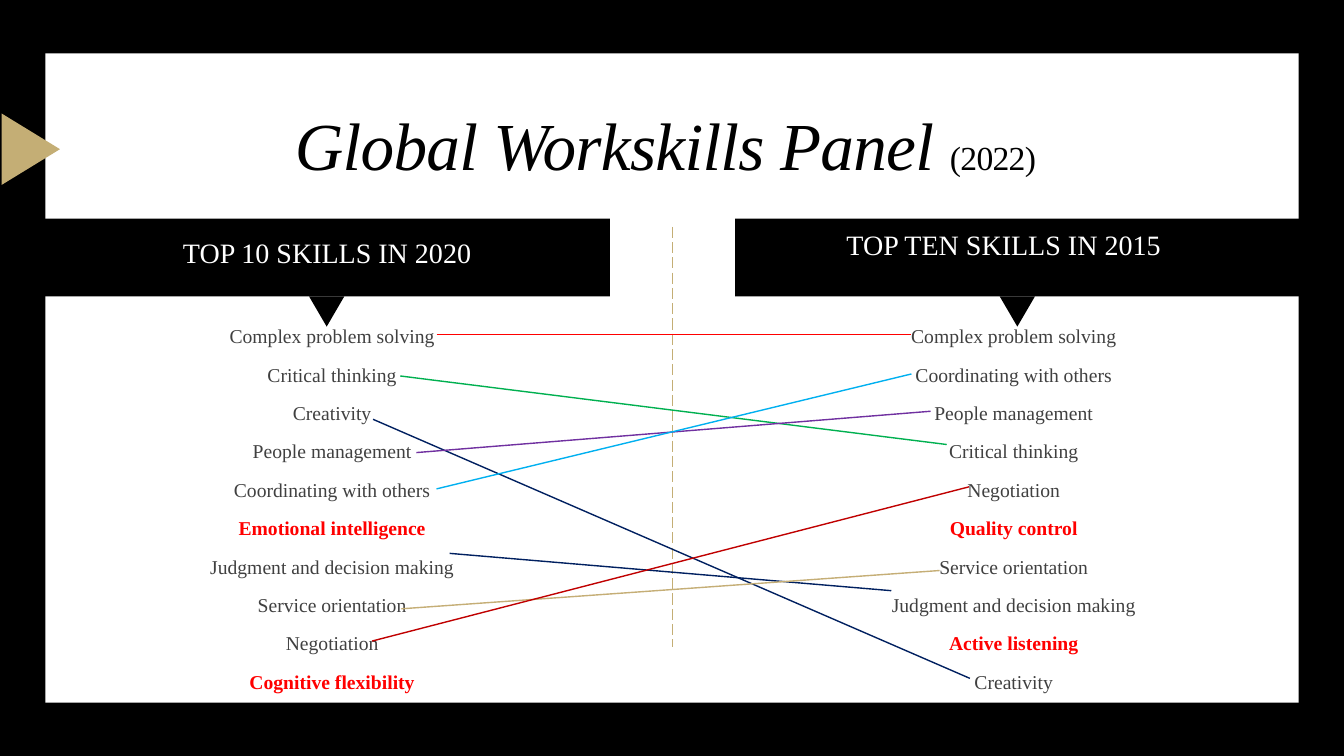
from lxml.etree import SubElement
from pptx import Presentation
from pptx.dml.color import RGBColor
from pptx.enum.dml import MSO_LINE
from pptx.enum.shapes import MSO_CONNECTOR, MSO_SHAPE
from pptx.enum.text import MSO_ANCHOR, PP_ALIGN
from pptx.oxml.ns import qn
from pptx.util import Inches, Pt

FONT = "Times New Roman"
BLACK, WHITE, GOLD, GREY, RED = "000000", "FFFFFF", "C4AE75", "404040", "FF0000"

SKILLS_2020 = [
    "Complex problem solving", "Critical thinking", "Creativity",
    "People management", "Coordinating with others", "Emotional intelligence",
    "Judgment and decision making", "Service orientation", "Negotiation",
    "Cognitive flexibility",
]
SKILLS_2015 = [
    "Complex problem solving", "Coordinating with others", "People management",
    "Critical thinking", "Negotiation", "Quality control",
    "Service orientation", "Judgment and decision making", "Active listening",
    "Creativity",
]
SKILL_LINKS = [
    ((4.33, 3.32), (9.04, 3.32), RED),
    ((3.97, 3.73), (9.39, 4.41), "00B050"),
    ((3.7, 4.16), (9.62, 6.73), "002060"),
    ((4.13, 4.49), (9.23, 4.08), "7030A0"),
    ((4.33, 4.85), (9.04, 3.71), "00B0F0"),
    ((4.46, 5.49), (8.84, 5.86), "002060"),
    ((3.98, 6.04), (9.32, 5.66), "C5AE76"),
    ((3.69, 6.36), (9.61, 4.83), "C00000"),
]


def color(hex_string):
    """Return the colour for a hex string."""
    return RGBColor.from_string(hex_string)


def add_block(slide, preset, box, fill, rotation=0):
    """Add a filled shape without outline or shadow."""
    shape = slide.shapes.add_shape(preset, *map(Inches, box))
    shape.rotation = rotation
    shape.shadow.inherit = False
    shape.fill.solid()
    shape.fill.fore_color.rgb = color(fill)
    shape.line.fill.background()


def add_line(slide, start, end, line_color):
    """Add a thin straight line and return it."""
    line = slide.shapes.add_connector(
        MSO_CONNECTOR.STRAIGHT, *map(Inches, (*start, *end)))
    line.line.color.rgb = color(line_color)
    line.line.width = Pt(1)
    SubElement(line._element.spPr, qn("a:effectLst"))
    return line


def add_text_frame(slide, box, anchor):
    """Add a wrapping text box and return its text frame."""
    text_frame = slide.shapes.add_textbox(*map(Inches, box)).text_frame
    text_frame.word_wrap = True
    text_frame.vertical_anchor = anchor
    return text_frame


def format_run(run, size, text_color, bold=False, italic=False):
    """Set the font of a run."""
    run.font.name = FONT
    run.font.size = Pt(size)
    run.font.color.rgb = color(text_color)
    run.font.bold = bold
    run.font.italic = italic


def format_paragraph(paragraph):
    """Centre a body paragraph and set its spacing."""
    paragraph.alignment = PP_ALIGN.CENTER
    paragraph.space_before = Pt(12)
    paragraph.space_after = Pt(2)


def add_blank_bullet(paragraph):
    """Give a paragraph a hanging indent with a blank bullet."""
    properties = paragraph._p.get_or_add_pPr()
    properties.set("marL", str(Inches(0.1)))
    properties.set("indent", str(Inches(-0.1)))
    bullet_color = SubElement(properties, qn("a:buClr"))
    SubElement(bullet_color, qn("a:srgbClr")).set("val", GOLD)
    SubElement(properties, qn("a:buChar")).set("char", " ")


def add_title(slide, box):
    """Add the slide title with its smaller year."""
    paragraph = add_text_frame(slide, box, MSO_ANCHOR.MIDDLE).paragraphs[0]
    paragraph.alignment = PP_ALIGN.CENTER
    paragraph.line_spacing = 0.9
    for text, size, italic in (("Global Workskills Panel ", 48, True),
                               ("(2022)", 24, False)):
        run = paragraph.add_run()
        run.text = text
        format_run(run, size, BLACK, italic=italic)
        run.font._element.set("spc", "-50")


def add_banner(slide, box):
    """Add a black banner with a pointer below its middle."""
    left, top, width, height = box
    add_block(slide, MSO_SHAPE.RECTANGLE, box, BLACK)
    pointer = (left + width / 2 - 0.18, top + height, 0.35, 0.3)
    add_block(slide, MSO_SHAPE.ISOSCELES_TRIANGLE, pointer, BLACK, 180)


def add_heading(slide, box, text):
    """Add the white heading of a column."""
    text_frame = add_text_frame(slide, box, MSO_ANCHOR.MIDDLE)
    text_frame.text = text
    paragraph = text_frame.paragraphs[0]
    format_paragraph(paragraph)
    format_run(paragraph.runs[0], 20, WHITE)


def add_skills(slide, box, skills, other_skills):
    """List the skills, marking those missing from the other list."""
    text_frame = add_text_frame(slide, box, MSO_ANCHOR.TOP)
    text_frame.margin_left = text_frame.margin_right = 0
    text_frame.text = "\n".join(skills)
    for paragraph, skill in zip(text_frame.paragraphs, skills):
        unique = skill not in other_skills
        format_paragraph(paragraph)
        paragraph.line_spacing = 0.8
        add_blank_bullet(paragraph)
        format_run(paragraph.runs[0], 14, RED if unique else GREY, bold=unique)


def add_background(slide):
    """Add the black frame, white panel and gold side marker."""
    slide.background.fill.solid()
    slide.background.fill.fore_color.rgb = color(BLACK)
    add_block(slide, MSO_SHAPE.RECTANGLE, (0.45, 0.53, 12.43, 6.44), WHITE)
    add_block(slide, MSO_SHAPE.ISOSCELES_TRIANGLE,
              (-0.05, 1.19, 0.71, 0.58), GOLD, 90)


def main():
    """Build the skills comparison slide."""
    presentation = Presentation()
    presentation.slide_width = Inches(13.33)
    presentation.slide_height = Inches(7.5)
    slide = presentation.slides.add_slide(presentation.slide_layouts[6])

    add_background(slide)
    for left in (0.44, 7.29):
        add_banner(slide, (left, 2.17, 5.61, 0.77))
    divider = add_line(slide, (6.67, 2.25), (6.67, 6.42), GOLD)
    divider.line.dash_style = MSO_LINE.LONG_DASH

    add_heading(slide, (0.71, 2.12, 5.07, 0.77), "TOP 10 SKILLS IN 2020")
    add_skills(slide, (0.71, 3.21, 5.07, 3.95), SKILLS_2020, SKILLS_2015)
    add_heading(slide, (7.42, 1.93, 5.07, 0.98), "TOP TEN SKILLS IN 2015")
    add_skills(slide, (7.47, 3.21, 5.07, 3.95), SKILLS_2015, SKILLS_2020)
    add_title(slide, (1.02, 0.98, 11.16, 1))
    for start, end, line_color in SKILL_LINKS:
        add_line(slide, start, end, line_color)

    presentation.save("out.pptx")


if __name__ == "__main__":
    main()
